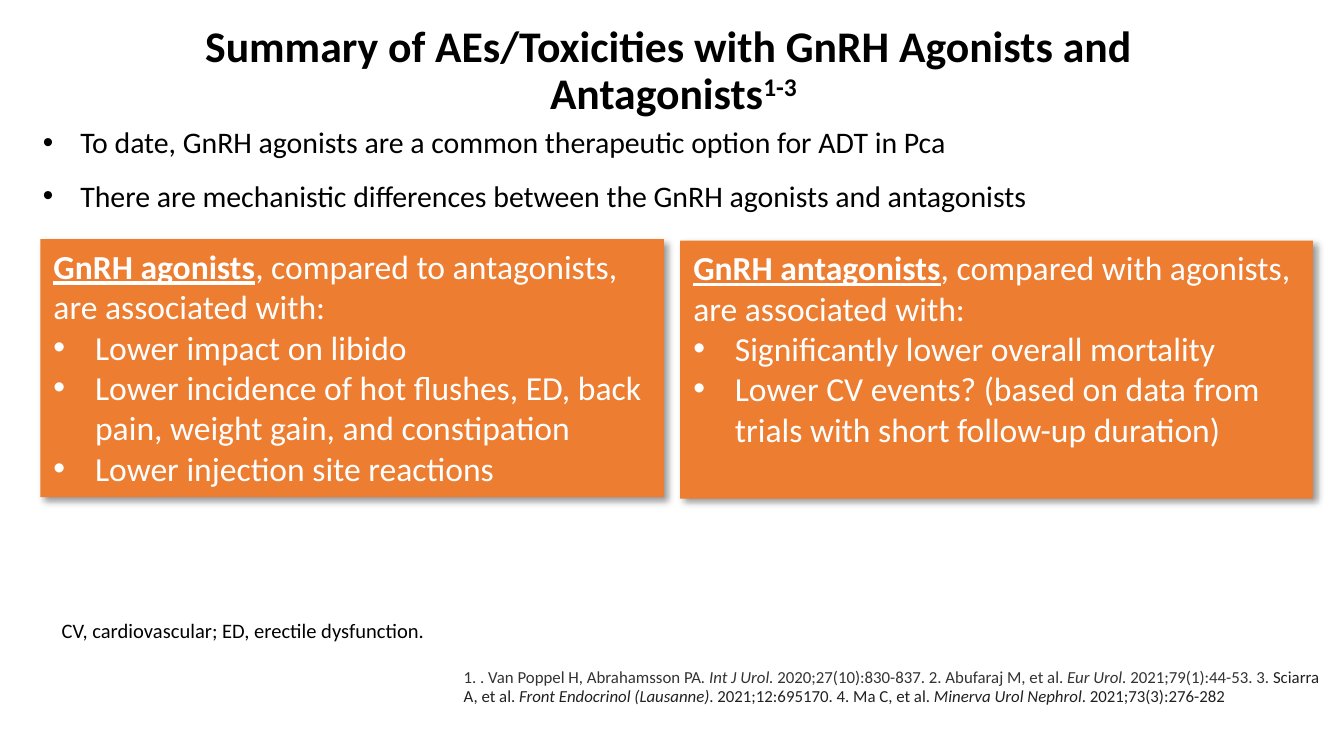
from lxml import etree
from pptx import Presentation
from pptx import util as u
from pptx.dml.color import RGBColor
from pptx.enum import shapes, text
from pptx.oxml.ns import qn

TITLE = [[("Summary of AEs/Toxicities with GnRH Agonists and \nAntagonists", {}),
          ("1-3", {"sup": True})]]
INTRO = [
    [("To date, GnRH agonists are a common therapeutic option for ADT in Pca", {})],
    [("There are mechanistic differences between the GnRH agonists and antagonists", {})],
]
DARK = {"color": "212121"}
ITALIC = {"italic": True}
REFERENCES = [[
    ("1. . Van Poppel H, Abrahamsson PA", {}),
    (". Int J Urol. ", ITALIC),
    ("2020;27(10):830-837. 2. Abufaraj M, et al. ", {}),
    ("Eur Urol. ", ITALIC),
    ("2021;79(1):44-53. 3. ", {}),
    ("Sciarra A, et al. ", DARK),
    ("Front Endocrinol (Lausanne)", DARK | ITALIC),
    (". 2021;12:695170. 4. Ma C, et al. ", DARK),
    ("Minerva Urol Nephrol", DARK | ITALIC),
    (". 2021;73(3):276-282", DARK),
]]
ABBREVIATIONS = [[("CV, cardiovascular; ED, erectile dysfunction.", {})]]
PANELS = [
    ((5.06, 1.79, 4.71, 1.92), "GnRH antagonists",
     ", compared with agonists, are associated with:",
     ["Significantly lower overall mortality",
      "Lower CV events? (based on data from trials with short follow-up duration)"]),
    ((0.3, 1.78, 4.64, 1.92), "GnRH agonists",
     ", compared to antagonists, are associated with:",
     ["Lower impact on libido",
      "Lower incidence of hot flushes, ED, back pain, weight gain, and constipation",
      "Lower injection site reactions"]),
]


def rgb(value):
    """Turn a hex string into a colour."""
    return RGBColor.from_string(value)


def place(sp, box):
    """Set the position and size of a shape in inches."""
    for name, value in zip(("left", "top", "width", "height"), box):
        setattr(sp, name, u.Inches(value))


def add_bullet(p, indent):
    """Give a paragraph a hanging round bullet."""
    pPr = p._p.get_or_add_pPr()
    pPr.set("marL", str(u.Inches(indent)))
    pPr.set("indent", str(-u.Inches(indent)))
    etree.SubElement(pPr, qn("a:buFont"), typeface="Arial")
    etree.SubElement(pPr, qn("a:buChar"), char="•")


def add_run(p, content, style):
    """Add one formatted run to a paragraph."""
    r = p.add_run()
    r.text = content
    style = dict(style)
    r.font.color.rgb = rgb(style.pop("color"))
    if style.pop("sup", False):
        r._r.get_or_add_rPr().set("baseline", "30000")
    for name, value in style.items():
        setattr(r.font, name, value)


def write(sp, paragraphs, size, color="000000", bold=False, indent=0, first_bullet=0,
          align=text.PP_ALIGN.LEFT, spacing=1.0, anchor=text.MSO_ANCHOR.TOP,
          margins=(0.1, 0.05)):
    """Fill a shape with formatted paragraphs."""
    tf = sp.text_frame
    side, edge = (u.Inches(m) for m in margins)
    frame = {"word_wrap": True, "auto_size": text.MSO_AUTO_SIZE.NONE,
             "vertical_anchor": anchor, "margin_left": side, "margin_right": side,
             "margin_top": edge, "margin_bottom": edge}
    for name, value in frame.items():
        setattr(tf, name, value)
    base = {"name": "Calibri", "size": u.Pt(size), "color": color,
            "bold": bold, "italic": False}
    for i, runs in enumerate(paragraphs):
        p = tf.paragraphs[0] if i == 0 else tf.add_paragraph()
        if indent and i >= first_bullet:
            add_bullet(p, indent)
        for name, value in {"alignment": align, "line_spacing": spacing}.items():
            setattr(p, name, value)
        for content, style in runs:
            for n, line in enumerate(content.split("\n")):
                if n:
                    p.add_line_break()
                add_run(p, line, base | style)


def add_text(s, box, paragraphs, size, **options):
    """Add a text box with formatted paragraphs."""
    sp = s.shapes.add_textbox(0, 0, 0, 0)
    place(sp, box)
    write(sp, paragraphs, size, **options)


def add_shadow(sp):
    """Give a shape a soft shadow to the lower right."""
    sp.shadow.inherit = False
    effects = sp._element.spPr.find(qn("a:effectLst"))
    shadow = etree.SubElement(effects, qn("a:outerShdw"), blurRad=str(u.Pt(4)),
                              dist=str(u.Pt(3)), dir="2700000", algn="tl",
                              rotWithShape="0")
    color = etree.SubElement(shadow, qn("a:srgbClr"), val="000000")
    etree.SubElement(color, qn("a:alpha"), val="40000")


def add_panel(s, box, heading, lead, points):
    """Add an orange panel with a heading and bullet points."""
    sp = s.shapes.add_shape(shapes.MSO_SHAPE.RECTANGLE, 0, 0, 0, 0)
    place(sp, box)
    sp.fill.solid()
    sp.fill.fore_color.rgb = rgb("ED7D31")
    sp.line.fill.background()
    add_shadow(sp)
    intro = [(heading, {"bold": True, "underline": True}), (lead, {})]
    write(sp, [intro] + [[(point, {})] for point in points], 18,
          color="FFFFFF", indent=0.31, first_bullet=1)


def main():
    """Build the slide and save it."""
    prs = Presentation()
    prs.slide_width = u.Inches(10)
    prs.slide_height = prs.slide_width * 9 // 16
    s = prs.slides.add_slide(prs.slide_layouts[5])
    title = s.shapes.title
    place(title, (0.22, 0.14, 9.58, 0.79))
    write(title, TITLE, 23.4, bold=True, align=text.PP_ALIGN.CENTER, spacing=0.9,
          anchor=text.MSO_ANCHOR.MIDDLE)
    add_text(s, (0.22, 0.74, 9.67, 1.05), INTRO, 16, indent=0.28, spacing=1.5)
    add_text(s, (3.38, 4.94, 6.58, 0.6), REFERENCES, 9, color="333333", spacing=0.9,
             margins=(0.07, 0.04))
    add_text(s, (0.36, 4.55, 9.28, 0.29), ABBREVIATIONS, 11)
    for panel in PANELS:
        add_panel(s, *panel)
    prs.save("out.pptx")


if __name__ == "__main__":
    main()
